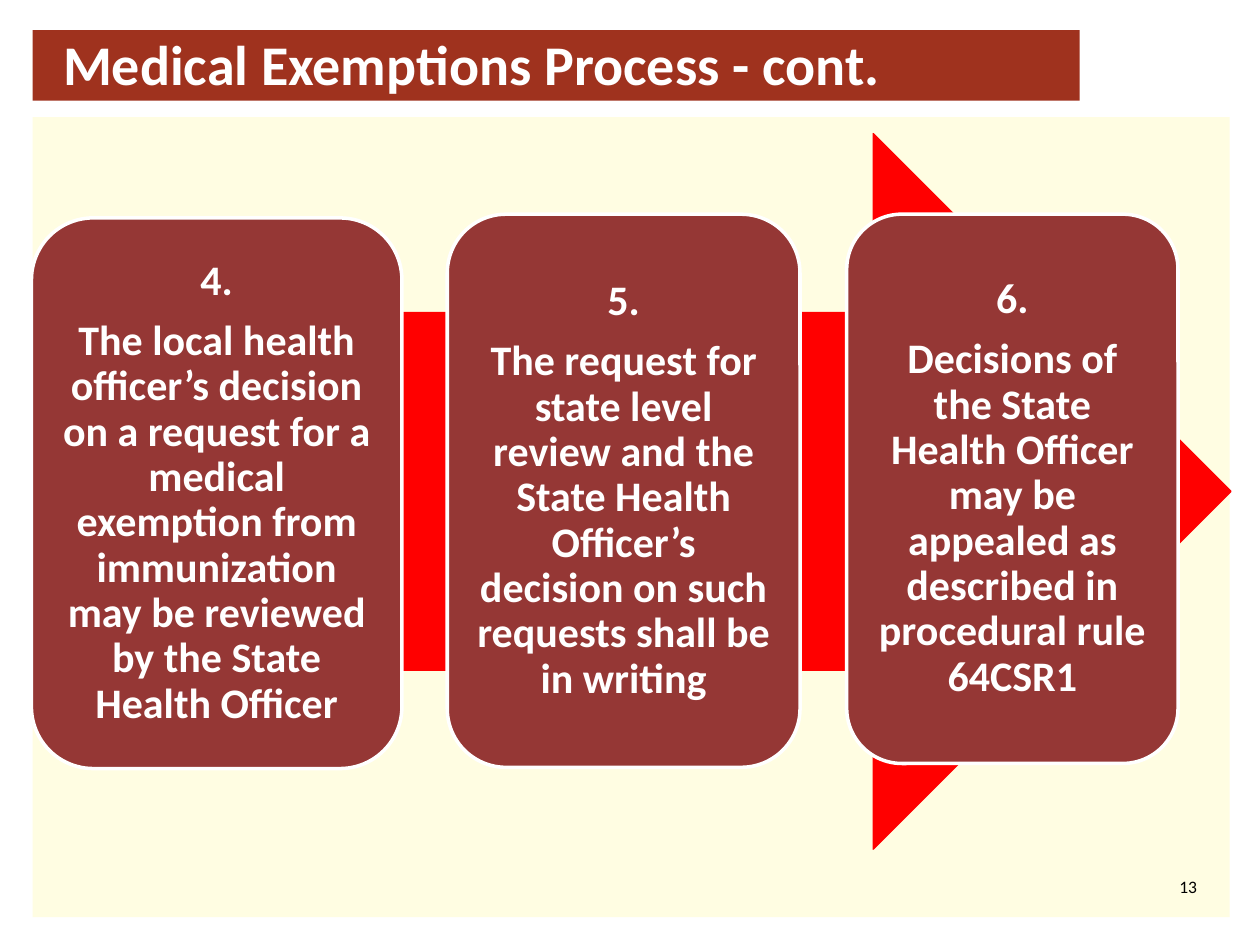
from pptx import Presentation
from pptx.dml.color import RGBColor
from pptx.enum.shapes import MSO_SHAPE
from pptx.enum.text import MSO_ANCHOR, MSO_AUTO_SIZE, PP_ALIGN
from pptx.util import Inches, Pt

CREAM, RUST, RED, MAROON = "FFFDE2", "9F321E", "FF0000", "953735"
WHITE, BLACK = "FFFFFF", "000000"

STEPS = [
    ((0.25, 1.73, 2.94, 4.37), "4.",
     "The local health officer’s decision on a request for a medical exemption "
     "from immunization may be reviewed by the State Health Officer"),
    ((3.55, 1.7, 2.8, 4.39), "5.",
     "The request for state level review and the State Health Officer’s "
     "decision on such requests shall be in writing"),
    ((6.72, 1.7, 2.63, 4.36), "6.",
     "Decisions of the State Health Officer may be appealed as described in "
     "procedural rule 64CSR1"),
]


def color(hex_value):
    return RGBColor.from_string(hex_value)


def inches(box):
    return [Inches(length) for length in box]


def write(shape, *lines, size, fill, bold=False, align=PP_ALIGN.LEFT,
          anchor=MSO_ANCHOR.TOP, inset=0, line_spacing=1.0, space_after=0):
    """Fill a shape with one paragraph per line, all in the same format."""
    frame = shape.text_frame
    frame.word_wrap = True
    frame.auto_size = MSO_AUTO_SIZE.NONE
    frame.vertical_anchor = anchor
    frame.margin_left = frame.margin_right = Inches(inset)
    frame.margin_top = frame.margin_bottom = Inches(inset)
    frame.text = "\n".join(lines)
    for paragraph in frame.paragraphs:
        paragraph.alignment = align
        paragraph.line_spacing = line_spacing
        paragraph.space_before = Pt(0)
        paragraph.space_after = Pt(space_after)
        font = paragraph.font
        font.name, font.size, font.bold = "Calibri", Pt(size), bold
        font.color.rgb = color(fill)


def add_block(slide, kind, box, fill, line=None, line_width=0.75):
    shape = slide.shapes.add_shape(kind, *inches(box))
    shape.shadow.inherit = False
    shape.fill.solid()
    shape.fill.fore_color.rgb = color(fill)
    if line:
        shape.line.color.rgb = color(line)
        shape.line.width = Pt(line_width)
    else:
        shape.line.fill.background()
    return shape


def add_title(slide, box, text):
    left, top, width, height = box
    add_block(slide, MSO_SHAPE.RECTANGLE, box, RUST)
    title = slide.shapes.title
    title.left, title.top, title.width, title.height = inches(
        (left + 0.24, top + 0.01, width - 0.28, height - 0.06))
    write(title, text, size=32, fill=WHITE, bold=True, anchor=MSO_ANCHOR.MIDDLE)
    # Bring the title in front of its band.
    slide.shapes.element.append(title.element)


def add_process(slide, box):
    """Draw the arrow in the box and the steps over it."""
    add_block(slide, MSO_SHAPE.RIGHT_ARROW, box, RED, line=RED)
    for step_box, number, text in STEPS:
        step = add_block(slide, MSO_SHAPE.ROUNDED_RECTANGLE, step_box, MAROON,
                         line=WHITE, line_width=2)
        write(step, number, text, size=24, fill=WHITE, bold=True,
              align=PP_ALIGN.CENTER, anchor=MSO_ANCHOR.MIDDLE, inset=0.1,
              line_spacing=0.9, space_after=8.4)


def add_page_number(slide, box, number):
    text_box = slide.shapes.add_textbox(*inches(box))
    write(text_box, number, size=10, fill=BLACK, align=PP_ALIGN.RIGHT)


def main():
    presentation = Presentation()
    presentation.slide_width, presentation.slide_height = Inches(10), Inches(7.5)
    slide = presentation.slides.add_slide(presentation.slide_layouts[5])
    add_block(slide, MSO_SHAPE.RECTANGLE, (0.26, 0.93, 9.5, 6.35), CREAM)
    add_title(slide, (0.26, 0.24, 8.31, 0.56), "Medical Exemptions Process - cont.")
    add_process(slide, (0.25, 1.06, 9.52, 5.68))
    add_page_number(slide, (9.12, 6.95, 0.38, 0.19), "13")
    presentation.save("out.pptx")


if __name__ == "__main__":
    main()
